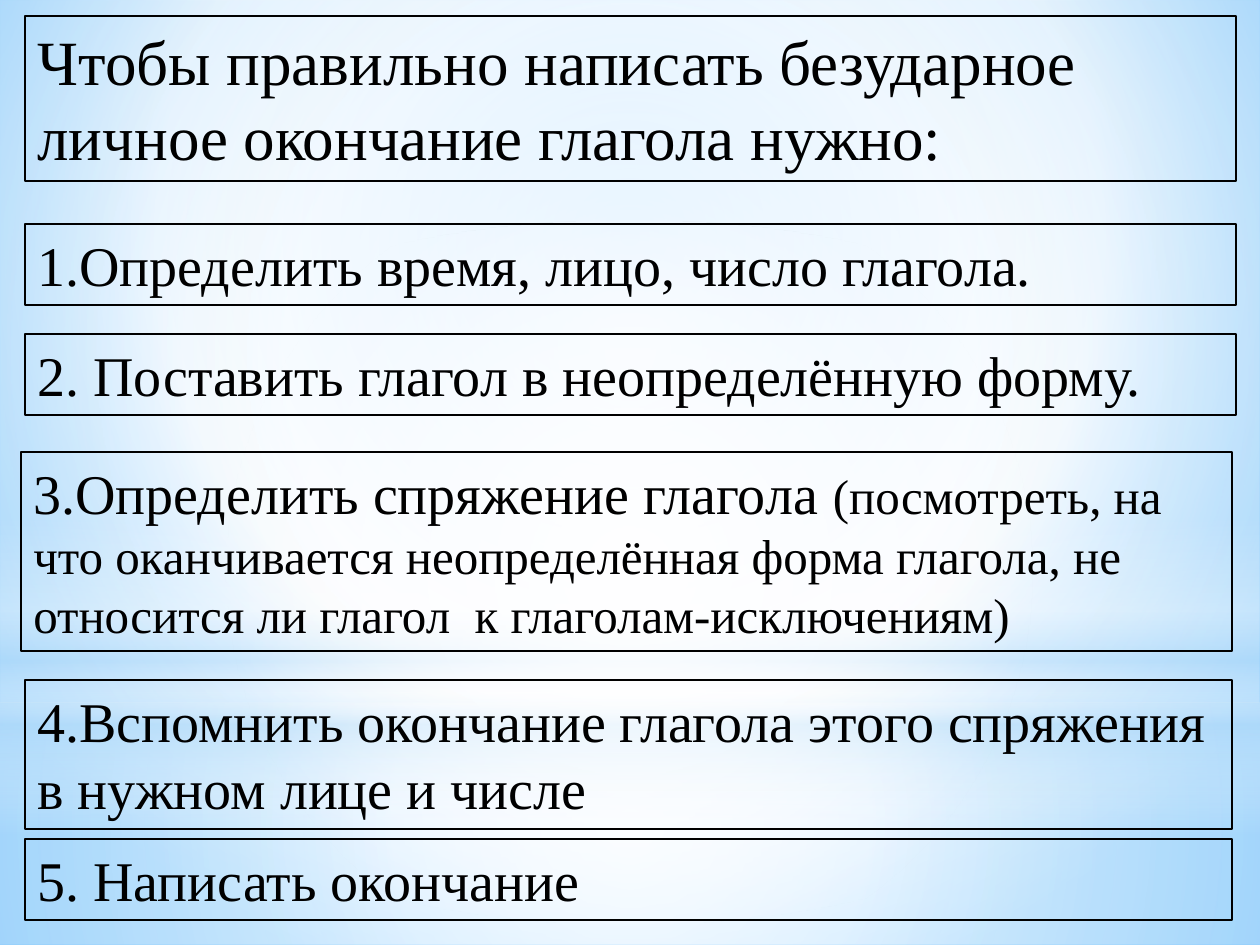
from dataclasses import dataclass

from lxml import etree
from pptx import Presentation
from pptx.dml.color import RGBColor
from pptx.enum.shapes import MSO_SHAPE
from pptx.enum.text import MSO_ANCHOR, MSO_AUTO_SIZE, PP_ALIGN
from pptx.oxml.ns import nsdecls, qn
from pptx.util import Emu, Pt

RECTANGLE, OVAL = MSO_SHAPE.RECTANGLE, MSO_SHAPE.OVAL
LEFT, TOP = PP_ALIGN.LEFT, MSO_ANCHOR.TOP
FIT_SHAPE = MSO_AUTO_SIZE.SHAPE_TO_FIT_TEXT

PX_PER_INCH = 126
WIDTH, HEIGHT = 1260, 945
TITLE_ONLY_LAYOUT = 5


@dataclass(frozen=True)
class Theme:
    font: str = "Times New Roman"
    ink: str = "000000"
    white: str = "FFFFFF"
    haze: str = "B4DCFA"
    sky: str = "9ED5FF"
    deep_sky: str = "5BB9FF"
    title_size: int = 36
    step_size: int = 32
    detail_size: int = 28
    frame: float = 1
    thin_frame: float = 0.75


THEME = Theme()
CENTER = (50, 50, 50, 50)
TITLE = "Чтобы правильно написать безударное личное окончание глагола нужно:"

# Left, top, width, height, frame width, main text, detail in smaller type
STEPS = [
    (25, 224, 1211, 81, THEME.frame, "1.Определить время, лицо, число глагола.", ""),
    (25, 334, 1211, 81, THEME.frame, "2. Поставить глагол в неопределённую форму.", ""),
    (21, 452, 1211, 199, THEME.frame, "3.Определить спряжение глагола ",
     "(посмотреть, на что оканчивается неопределённая форма глагола, "
     "не относится ли глагол  к глаголам-исключениям)"),
    (25, 680, 1207, 149, THEME.thin_frame,
     "4.Вспомнить окончание глагола этого спряжения в нужном лице и числе", ""),
    (25, 839, 1207, 81, THEME.frame, "5. Написать окончание", ""),
]

# Preset, top, height, gradient stops (position, colour, opacity), focus
# A focus of None means a vertical linear gradient
BACKDROPS = [
    (RECTANGLE, 703, 242,
     [(0, THEME.white, 91), (37, THEME.white, 76), (100, THEME.haze, 79)], CENTER),
    (RECTANGLE, 0, 703,
     [(0, THEME.white, 89), (48, THEME.white, 62), (100, THEME.haze, 79)], CENTER),
    (RECTANGLE, 519, 315,
     [(0, THEME.white, 0), (29, THEME.white, 30), (45, THEME.haze, 40),
      (55, THEME.white, 26), (65, THEME.haze, 60), (100, THEME.white, 0)], None),
    (OVAL, 221, 703, [(0, THEME.white, 100), (56, THEME.white, 0)], CENTER),
]


def px(length):
    return Emu(round(length * 914400 / PX_PER_INCH))


def set_gradient(properties, stops, focus):
    """Replace the solid fill of an element with a gradient."""
    stop_xml = "".join(
        f'<a:gs pos="{position * 1000}"><a:srgbClr val="{color}">'
        f'<a:alpha val="{opacity * 1000}"/></a:srgbClr></a:gs>'
        for position, color, opacity in stops)
    if focus:
        sides = " ".join(f'{side}="{value * 1000}"' for side, value in zip("ltrb", focus))
        direction = f'<a:path path="circle"><a:fillToRect {sides}/></a:path>'
    else:
        direction = '<a:lin ang="5400000" scaled="0"/>'
    gradient = etree.fromstring(
        f'<a:gradFill {nsdecls("a")} rotWithShape="1">'
        f'<a:gsLst>{stop_xml}</a:gsLst>{direction}</a:gradFill>')
    properties.replace(properties.find(qn("a:solidFill")), gradient)


def paint_background(slide):
    slide.background.fill.solid()
    properties = slide.element.find(".//" + qn("p:bgPr"))
    stops = [(0, THEME.sky, 100), (60, THEME.white, 100), (100, THEME.deep_sky, 100)]
    set_gradient(properties, stops, (20, 10, 20, 60))


def add_backdrop(slide, preset, top, height, stops, focus):
    shape = slide.shapes.add_shape(preset, 0, px(top), px(WIDTH), px(height))
    shape.shadow.inherit = False
    shape.line.fill.background()
    shape.fill.solid()
    set_gradient(shape.element.spPr, stops, focus)


def add_text(paragraph, text, *, size, font=THEME.font, color=THEME.ink):
    run = paragraph.add_run()
    run.text = text
    run.font.size = Pt(size)
    run.font.name = font
    run.font.color.rgb = RGBColor.from_string(color)


def format_box(shape, left, top, width, height, frame):
    """Place and outline a text shape; return its first paragraph."""
    shape.left, shape.top = px(left), px(top)
    shape.width, shape.height = px(width), px(height)
    shape.fill.background()
    shape.line.color.rgb = RGBColor.from_string(THEME.ink)
    shape.line.width = Pt(frame)
    text_frame = shape.text_frame
    text_frame.word_wrap = True
    text_frame.auto_size = FIT_SHAPE
    text_frame.vertical_anchor = TOP
    paragraph = text_frame.paragraphs[0]
    paragraph.alignment = LEFT
    return paragraph


def add_title(slide):
    title = slide.shapes.title
    paragraph = format_box(title, 25, 16, 1211, 165, THEME.frame)
    add_text(paragraph, TITLE, size=THEME.title_size)
    # Bring the title in front of the backdrops
    title.element.getparent().append(title.element)


def add_step(slide, left, top, width, height, frame, text, detail):
    box = slide.shapes.add_textbox(0, 0, 0, 0)
    paragraph = format_box(box, left, top, width, height, frame)
    add_text(paragraph, text, size=THEME.step_size)
    if detail:
        add_text(paragraph, detail, size=THEME.detail_size)


def main():
    presentation = Presentation()
    presentation.slide_width, presentation.slide_height = px(WIDTH), px(HEIGHT)
    slide = presentation.slides.add_slide(presentation.slide_layouts[TITLE_ONLY_LAYOUT])

    # Sky behind the text
    paint_background(slide)
    for backdrop in BACKDROPS:
        add_backdrop(slide, *backdrop)

    # Heading and the steps of the rule
    add_title(slide)
    for step in STEPS:
        add_step(slide, *step)

    presentation.save("out.pptx")


if __name__ == "__main__":
    main()
